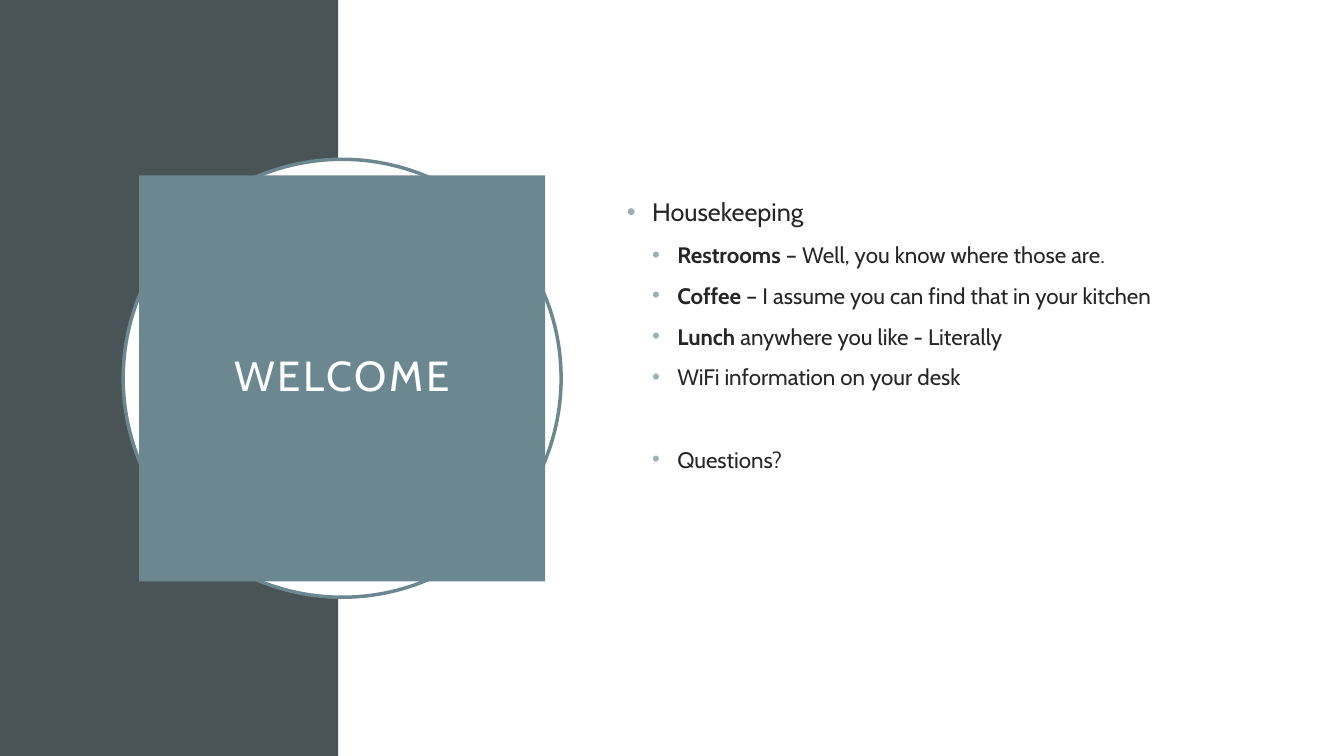
from lxml import etree
from pptx import Presentation
from pptx.dml.color import RGBColor
from pptx.enum import shapes, text
from pptx.oxml.ns import qn
from pptx.util import Pt

FONT = "Cabin"
DARK, TEAL, WHITE = "4A5356", "6B8891", "FFFFFF"
INK, DOT = "262626", "9BAFB5"
RECT, OVAL = shapes.MSO_SHAPE.RECTANGLE, shapes.MSO_SHAPE.OVAL
WIDE, HIGH, SPLIT = 960, 540, 241.7

ITEMS = [
    ("Restrooms", " – Well, you know where those are."),
    ("Coffee", " – I assume you can find that in your kitchen"),
    ("Lunch", " anywhere you like - Literally"),
    ("", "WiFi information on your desk"),
]


def paint(color, code):
    color.rgb = RGBColor.from_string(code)


def fill(shape, code):
    shape.fill.solid()
    paint(shape.fill.fore_color, code)


def place(shape, left, top, width, height):
    shape.left, shape.top = Pt(left), Pt(top)
    shape.width, shape.height = Pt(width), Pt(height)


def add_back(title, slide, kind, box, color, line=None):
    """Add a shape behind the title."""
    shape = slide.shapes.add_shape(kind, *map(Pt, box))
    shape.shadow.inherit = False
    fill(shape, color)
    if line:
        paint(shape.line.color, line)
        shape.line.width = Pt(2.5)
    else:
        shape.line.fill.background()
    title.element.addprevious(shape.element)


def write(para, words, size=16, color=INK, bold=False, track=0):
    run = para.add_run()
    run.text = words
    font = run.font
    font.name, font.size, font.bold = FONT, Pt(size), bold
    paint(font.color, color)
    if track:
        run._r.get_or_add_rPr().set("spc", str(track * 100))


def set_frame(shape, left, top, right, bottom):
    frame = shape.text_frame
    frame.word_wrap = True
    frame.auto_size = text.MSO_AUTO_SIZE.NONE
    frame.vertical_anchor = text.MSO_ANCHOR.MIDDLE
    frame.margin_left, frame.margin_top = Pt(left), Pt(top)
    frame.margin_right, frame.margin_bottom = Pt(right), Pt(bottom)
    return frame


def set_bullet(para, level, before=10):
    para.level = level
    para.space_before, para.space_after = Pt(before), Pt(0)
    para.line_spacing = 1.0
    props = para._p.get_or_add_pPr()
    props.set("marL", str(Pt(18 * (level + 1))))
    props.set("indent", str(Pt(-18)))
    tint = etree.SubElement(props, qn("a:buClr"))
    etree.SubElement(tint, qn("a:srgbClr"), val=DOT)
    etree.SubElement(props, qn("a:buFont"), typeface="Arial")
    etree.SubElement(props, qn("a:buChar"), char="•")


def set_title(title):
    place(title, 99.4, 125.2, 290, 290)
    fill(title, TEAL)
    para = set_frame(title, 14.4, 14.4, 14.4, 14.4).paragraphs[0]
    para.alignment = text.PP_ALIGN.CENTER
    para.line_spacing = 0.9
    write(para, "WELCOME", size=30, color=WHITE, track=2)


def set_list(body):
    place(body, 440.6, 110.2, 475.2, 319)
    frame = set_frame(body, 7.2, 3.6, 7.2, 65)
    head = frame.paragraphs[0]
    set_bullet(head, 0)
    write(head, "Housekeeping", size=18)
    for lead, rest in ITEMS:
        para = frame.add_paragraph()
        set_bullet(para, 1)
        if lead:
            write(para, lead, bold=True)
        write(para, rest)
    last = frame.add_paragraph()
    set_bullet(last, 1, before=39.4)
    write(last, "Questions?")


def main():
    deck = Presentation()
    deck.slide_width, deck.slide_height = Pt(WIDE), Pt(HIGH)
    slide = deck.slides.add_slide(deck.slide_layouts[1])
    title, body = slide.shapes.title, slide.placeholders[1]
    add_back(title, slide, RECT, (0, 0, SPLIT, HIGH), DARK)
    add_back(title, slide, RECT, (SPLIT, 0, WIDE - SPLIT, HIGH), WHITE)
    add_back(title, slide, OVAL, (88, 113.8, 312.8, 312.8), WHITE, TEAL)
    set_title(title)
    set_list(body)
    deck.save("out.pptx")


if __name__ == "__main__":
    main()
